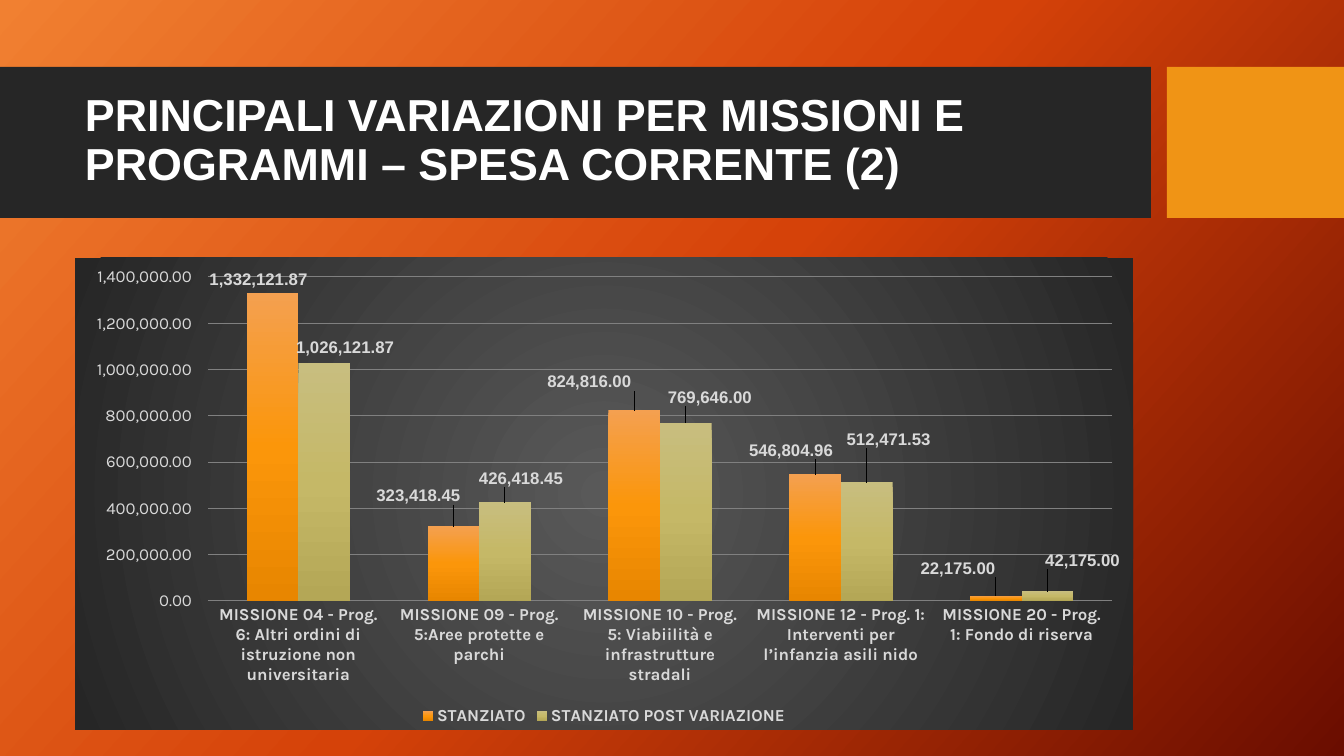
import pptx
import pptx.chart.data
import pptx.dml.color
import pptx.enum.chart
import pptx.enum.shapes
import pptx.enum.text
import pptx.oxml
import pptx.oxml.ns
import pptx.util

SLIDE_SIZE = (1344, 756)
EMU_PER_PX = 12192000 / SLIDE_SIZE[0]
COLORS = {
    "band": "262626", "accent": "F09415", "title": "FFFFFF",
    "chart text": "D9D9D9", "grid": "808080",
}
BACKGROUND = [(0, "F18031"), (50, "D54209"), (100, "6A0D00")]
CHART_AREA = [(0, "595959"), (100, "262626")]
CENTRE_PATH = '<a:path path="circle"><a:fillToRect l="50000" t="50000" r="50000" b="50000"/></a:path>'
NUMBER_FORMAT = r"#,##0.00\ _€"
CHART_BOX = (75, 258, 1059, 472)
PLOT_BOX = (133, 19, 905, 324)
MISSIONS = [
    "MISSIONE 04 - Prog. 6: Altri ordini di istruzione non universitaria",
    "MISSIONE 09 - Prog. 5:Aree protette e parchi",
    "MISSIONE 10 - Prog. 5: Viabiilità e infrastrutture stradali",
    "MISSIONE 12 - Prog. 1: Interventi per l’infanzia asili nido",
    "MISSIONE 20 - Prog. 1: Fondo di riserva",
]
# name, values, bar gradient, label shifts in px
BUDGETS = [
    ("STANZIATO", (1332121.87, 323418.45, 824816, 546804.96, 22175),
     [(0, "F4A050"), (50, "FB960A"), (100, "E88600")],
     [(-7, 0), (-28, -17), (-38, -15), (-17, -11), (-31, -14)]),
    ("STANZIATO POST VARIAZIONE", (1026121.87, 426418.45, 769646, 512471.53, 42175),
     [(0, "C8BE7F"), (50, "C5B867"), (100, "B4A756")],
     [(28, -3), (23, -11), (31, -12), (29, -30), (42, -18)]),
]


def px(length):
    return pptx.util.Emu(round(length * EMU_PER_PX))


def rgb(name):
    return pptx.dml.color.RGBColor.from_string(COLORS[name])


def parse(tag, content):
    """Build one element whose children may use the a: and c: prefixes."""
    return pptx.oxml.parse_xml(
        f'<{tag} {pptx.oxml.ns.nsdecls("a", "c")}>{content}</{tag}>')


def gradient(stops, direction):
    marks = "".join(f'<a:gs pos="{pos * 1000}"><a:srgbClr val="{color}"/></a:gs>'
                    for pos, color in stops)
    return parse("a:gradFill", f"<a:gsLst>{marks}</a:gsLst>{direction}")


def linear(degrees):
    return f'<a:lin ang="{degrees * 60000}" scaled="0"/>'


def swap_solid_fill(element, stops, degrees):
    solid = element.xpath(".//a:solidFill")[0]
    solid.getparent().replace(solid, gradient(stops, linear(degrees)))


def manual_layout(settings):
    content = "".join(f'<c:{key} val="{value}"/>' for key, value in settings.items())
    return parse("c:layout", f"<c:manualLayout>{content}</c:manualLayout>")


def style_font(font, face, size, color, bold):
    font.name = face
    font.size = pptx.util.Pt(size)
    font.bold = bold
    font.color.rgb = rgb(color)


def add_block(slide, box, color):
    block = slide.shapes.add_shape(
        pptx.enum.shapes.MSO_SHAPE.RECTANGLE, *map(px, box))
    block.shadow.inherit = False
    block.fill.solid()
    block.fill.fore_color.rgb = rgb(color)
    block.line.fill.background()


def add_title(slide, box, text):
    frame = slide.shapes.add_textbox(*map(px, box)).text_frame
    frame.word_wrap = True
    frame.vertical_anchor = pptx.enum.text.MSO_ANCHOR.MIDDLE
    frame.text = text
    paragraph = frame.paragraphs[0]
    paragraph.line_spacing = 0.9
    style_font(paragraph.runs[0].font, "Arial", 32, "title", True)


def style_axis(axis, bold):
    axis.major_tick_mark = pptx.enum.chart.XL_TICK_MARK.NONE
    axis.minor_tick_mark = pptx.enum.chart.XL_TICK_MARK.NONE
    axis.format.line.fill.background()
    style_font(axis.tick_labels.font, "Karla", 12, "chart text", bold)


def label_bars(series, shifts):
    """Show the values above the bars, each moved by its own shift."""
    outside = pptx.enum.chart.XL_LABEL_POSITION.OUTSIDE_END
    labels = series.data_labels
    labels.show_value = True
    labels.number_format = NUMBER_FORMAT
    labels.number_format_is_linked = False
    labels.position = outside
    style_font(labels.font, "Arial", 12, "chart text", True)
    for index, (dx, dy) in enumerate(shifts):
        label = series.points[index].data_label
        style_font(label.font, "Arial", 12, "chart text", True)
        label.position = outside
        label_index = series._element.xpath(f'.//c:dLbl/c:idx[@val="{index}"]')[0]
        label_index.addnext(manual_layout(
            {"x": round(dx / CHART_BOX[2], 4), "y": round(dy / CHART_BOX[3], 4)}))


def place_plot(chart):
    x, y, width, height = PLOT_BOX
    plot_area = chart._chartSpace.xpath("./c:chart/c:plotArea")[0]
    for old_layout in plot_area.xpath("./c:layout"):
        plot_area.remove(old_layout)
    plot_area.insert(0, manual_layout({
        "layoutTarget": "inner", "xMode": "edge", "yMode": "edge",
        "x": round(x / CHART_BOX[2], 4), "y": round(y / CHART_BOX[3], 4),
        "w": round(width / CHART_BOX[2], 4), "h": round(height / CHART_BOX[3], 4)}))


def fill_chart_area(chart):
    area = parse("c:spPr", "<a:ln><a:noFill/></a:ln>")
    area.insert(0, gradient(CHART_AREA, CENTRE_PATH))
    chart._chartSpace.xpath("./c:chart")[0].addnext(area)


def add_budget_chart(slide):
    budget_data = pptx.chart.data.CategoryChartData(number_format=NUMBER_FORMAT)
    budget_data.categories = MISSIONS
    for name, values, _, _ in BUDGETS:
        budget_data.add_series(name, values)
    chart = slide.shapes.add_chart(
        pptx.enum.chart.XL_CHART_TYPE.COLUMN_CLUSTERED,
        *map(px, CHART_BOX), budget_data).chart
    chart.has_title = False
    style_font(chart.font, "Karla", 10, "title", False)
    fill_chart_area(chart)
    place_plot(chart)

    style_axis(chart.category_axis, True)
    amounts = chart.value_axis
    style_axis(amounts, False)
    amounts.minimum_scale, amounts.maximum_scale = 0, 1400000
    amounts.major_unit = 200000
    amounts.tick_labels.number_format = NUMBER_FORMAT
    amounts.tick_labels.number_format_is_linked = False
    grid = amounts.major_gridlines.format.line
    grid.width = pptx.util.Pt(0.75)
    grid.color.rgb = rgb("grid")

    chart.has_legend = True
    chart.legend.position = pptx.enum.chart.XL_LEGEND_POSITION.BOTTOM
    chart.legend.include_in_layout = False
    style_font(chart.legend.font, "Karla", 12, "chart text", True)

    bars = chart.plots[0]
    bars.gap_width = 150
    bars.overlap = 0
    bars.vary_by_categories = False
    for series, (_, _, stops, shifts) in zip(bars.series, BUDGETS):
        series.format.fill.solid()
        series.format.fill.fore_color.rgb = rgb("accent")
        swap_solid_fill(series._element, stops, 90)
        label_bars(series, shifts)


def main():
    deck = pptx.Presentation()
    deck.slide_width, deck.slide_height = map(px, SLIDE_SIZE)
    slide = deck.slides.add_slide(deck.slide_layouts[6])
    slide.background.fill.solid()
    swap_solid_fill(slide._element, BACKGROUND, 42)
    add_block(slide, (0, 67, 1151, 151), "band")
    add_block(slide, (1167, 67, 177, 151), "accent")
    add_title(slide, (75, 82, 1059, 119),
              "PRINCIPALI VARIAZIONI PER MISSIONI E PROGRAMMI – SPESA CORRENTE (2)")
    add_budget_chart(slide)
    deck.save("out.pptx")


if __name__ == "__main__":
    main()
